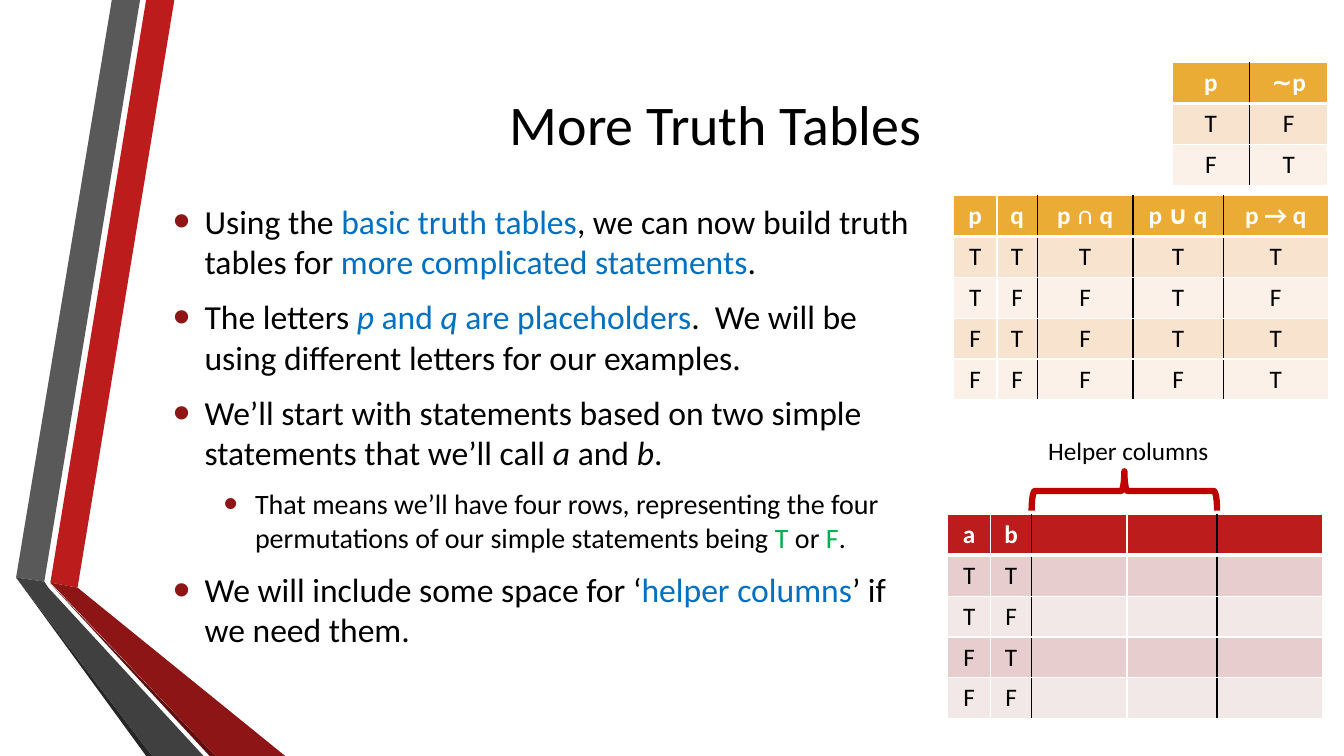
from lxml.etree import SubElement
from pptx import Presentation
from pptx.dml.color import RGBColor
from pptx.enum.shapes import MSO_SHAPE as SHAPE
from pptx.enum.text import MSO_ANCHOR as ANCHOR, PP_ALIGN as ALIGN
from pptx.oxml import parse_xml
from pptx.oxml.ns import nsdecls, qn
from pptx.util import Pt

FONT = "Calibri"
COLORS = {
    "black": "000000", "white": "FFFFFF", "blue": "0070C0", "green": "00B050",
    "red": "BC1C1C", "brace": "C00000", "maroon": "8D1515", "wine": "5E0E0E",
    "gray": "595959", "charcoal": "404040", "ink": "262626", "gold": "EAAC35",
    "rose": "E7CDCD", "blush": "F3E8E8", "peach": "F7E3CE", "cream": "FBF1E8",
}

RIBBONS = [
    ("red", [(36, 416.16), (55.44, 419.76), (124.56, 0), (104.4, 0)]),
    ("gray", [(100.08, 0), (79.92, 0), (11.52, 412.56), (31.68, 415.44)]),
    ("ink", [(11.52, 412.56), (104.4, 540), (108.72, 540)]),
    ("wine", [(36, 416.88), (149.76, 540), (154.08, 540)]),
    ("maroon", [(36, 416.16), (154.08, 540), (203.76, 540), (55.44, 419.76)]),
    ("charcoal", [(145.44, 540), (34.56, 419.76), (31.68, 415.44),
                  (11.52, 412.56), (108.72, 540)]),
]

TITLE = "More Truth Tables"
BULLETS = [
    (0, [("Using the ",), ("basic truth tables", "blue"),
         (", we can now build truth tables for ",),
         ("more complicated statements", "blue"), (".",)]),
    (0, [("The letters ",), ("p", "blue", True), (" and ", "blue"),
         ("q", "blue", True), (" are placeholders", "blue"),
         (".  We will be using different letters for our examples.",)]),
    (0, [("We’ll start with statements based on two simple statements that we’ll call ",),
         ("a", "black", True), (" and ",), ("b", "black", True), (".",)]),
    (1, [("That means we’ll have four rows, representing the four permutations "
          "of our simple statements being ",),
         ("T", "green"), (" or ",), ("F", "green"), (".",)]),
    (0, [("We will include some space for ‘",), ("helper columns", "blue"),
         ("’ if we need them.",)]),
]
LEVELS = [(24, 22.5), (20, 58.5)]
HANG = 22.5

HELPER_LABEL = "Helper columns"
ROW_HEIGHT = 29.2
WIDE = [31, 28.8, 68.4, 64.4, 75.2]
GOLD = ("gold", "peach", "cream")
RED = ("red", "rose", "blush")
TABLES = [
    dict(left=676.8, top=367.4, widths=WIDE, fills=RED, rules={1: 1, 3: 2.25},
         rows=[["a", "b", "", "", ""], ["T", "T", "", "", ""], ["T", "F", "", "", ""],
               ["F", "T", "", "", ""], ["F", "F", "", "", ""]]),
    dict(left=681.1, top=139.7, widths=WIDE, fills=GOLD, rules={1: 1, 2: 1, 3: 1},
         rows=[["p", "q", "p ∩ q", "p ∪ q", "p → q"], list("TTTTT"), list("TFFTF"),
               list("FTFTT"), list("FFFFT")]),
    dict(left=837.1, top=44.8, widths=[55.6, 55.6], fills=GOLD, rules={0: 1},
         rows=[["p", "∼p"], list("TF"), list("FT")]),
]


def rgb(name):
    return RGBColor.from_string(COLORS[name])


def write(p, text, size=18, color="black", bold=False, align=ALIGN.LEFT):
    p.alignment = align
    for part, tint, italic in [(*run, *(color, False)[len(run) - 1:]) for run in text]:
        r = p.add_run()
        r.text = part
        r.font.name, r.font.size = FONT, Pt(size)
        r.font.bold, r.font.italic = bold, italic
        r.font.color.rgb = rgb(tint)


def add_box(s, left, top, width, height, anchor=ANCHOR.TOP):
    tf = s.shapes.add_textbox(Pt(left), Pt(top), Pt(width), Pt(height)).text_frame
    tf.word_wrap = True
    tf.vertical_anchor = anchor
    return tf


def add_ribbon(s, color, points):
    corners = [(Pt(x), Pt(y)) for x, y in points]
    builder = s.shapes.build_freeform(*corners[0], scale=1)
    builder.add_line_segments(corners[1:], close=True)
    sp = builder.convert_to_shape()
    sp.shadow.inherit = False
    sp.fill.solid()
    sp.fill.fore_color.rgb = rgb(color)
    sp.line.fill.background()


def add_bullet(p, level, first):
    size, indent = LEVELS[level]
    p.level = level
    p.space_before = Pt(0 if first else size * 0.2)
    p.space_after = Pt(6)
    pPr = p._p.get_or_add_pPr()
    pPr.set("marL", str(Pt(indent)))
    pPr.set("indent", str(-Pt(HANG)))
    SubElement(SubElement(pPr, qn("a:buClr")), qn("a:srgbClr"), val=COLORS["maroon"])
    SubElement(pPr, qn("a:buSzPct"), val="145000")
    SubElement(pPr, qn("a:buFont"), typeface="Arial")
    SubElement(pPr, qn("a:buChar"), char="•")
    return size


def set_borders(cell, borders):
    tcPr = cell._tc.get_or_add_tcPr()
    for i, (side, (color, width)) in enumerate(borders.items()):
        tcPr.insert(i, parse_xml(
            f'<a:ln{side} {nsdecls("a")} w="{Pt(width)}"><a:solidFill>'
            f'<a:srgbClr val="{COLORS[color]}"/></a:solidFill></a:ln{side}>'))


def add_truth_table(s, left, top, widths, fills, rules, rows):
    table = s.shapes.add_table(len(rows), len(widths), Pt(left), Pt(top), Pt(sum(widths)),
                               Pt(ROW_HEIGHT * len(rows))).table
    for column, width in zip(table.columns, widths):
        column.width = Pt(width)
    plain = ("white", 1)
    edges = {c: ("black", width) for c, width in rules.items()}
    for i, row in enumerate(rows):
        table.rows[i].height = Pt(ROW_HEIGHT)
        header = i == 0
        for j, text in enumerate(row):
            cell = table.cell(i, j)
            cell.fill.solid()
            cell.fill.fore_color.rgb = rgb(fills[0] if header else fills[2 - i % 2])
            set_borders(cell, {
                "L": edges.get(j - 1, plain), "R": edges.get(j, plain),
                "T": ("white", 3) if i == 1 else plain,
                "B": ("white", 3) if header else plain})
            if text:
                write(cell.text_frame.paragraphs[0], [(text,)], bold=header,
                      color="white" if header else "black", align=ALIGN.CENTER)


def main():
    prs = Presentation()
    prs.slide_width, prs.slide_height = Pt(960), Pt(540)
    s = prs.slides.add_slide(prs.slide_layouts[6])

    for color, points in RIBBONS:
        add_ribbon(s, color, points)

    tf = add_box(s, 116.6, 54, 789.1, 68.4, ANCHOR.MIDDLE)
    write(tf.paragraphs[0], [(TITLE,)], size=40, align=ALIGN.CENTER)

    tf = add_box(s, 116.6, 139.7, 552.2, 377.3)
    for i, (level, runs) in enumerate(BULLETS):
        p = tf.add_paragraph() if i else tf.paragraphs[0]
        write(p, runs, size=add_bullet(p, level, i == 0))

    brace = s.shapes.add_shape(SHAPE.RIGHT_BRACE, Pt(789.1), Pt(284.4), Pt(28.1), Pt(132.5))
    brace.rotation = 270
    brace.shadow.inherit = False
    brace.fill.background()
    brace.line.color.rgb = rgb("brace")
    brace.line.width = Pt(4.5)

    tf = add_box(s, 741.6, 307.4, 138.2, 28.8)
    write(tf.paragraphs[0], [(HELPER_LABEL,)])

    for spec in TABLES:
        add_truth_table(s, **spec)
    prs.save("out.pptx")


if __name__ == "__main__":
    main()
